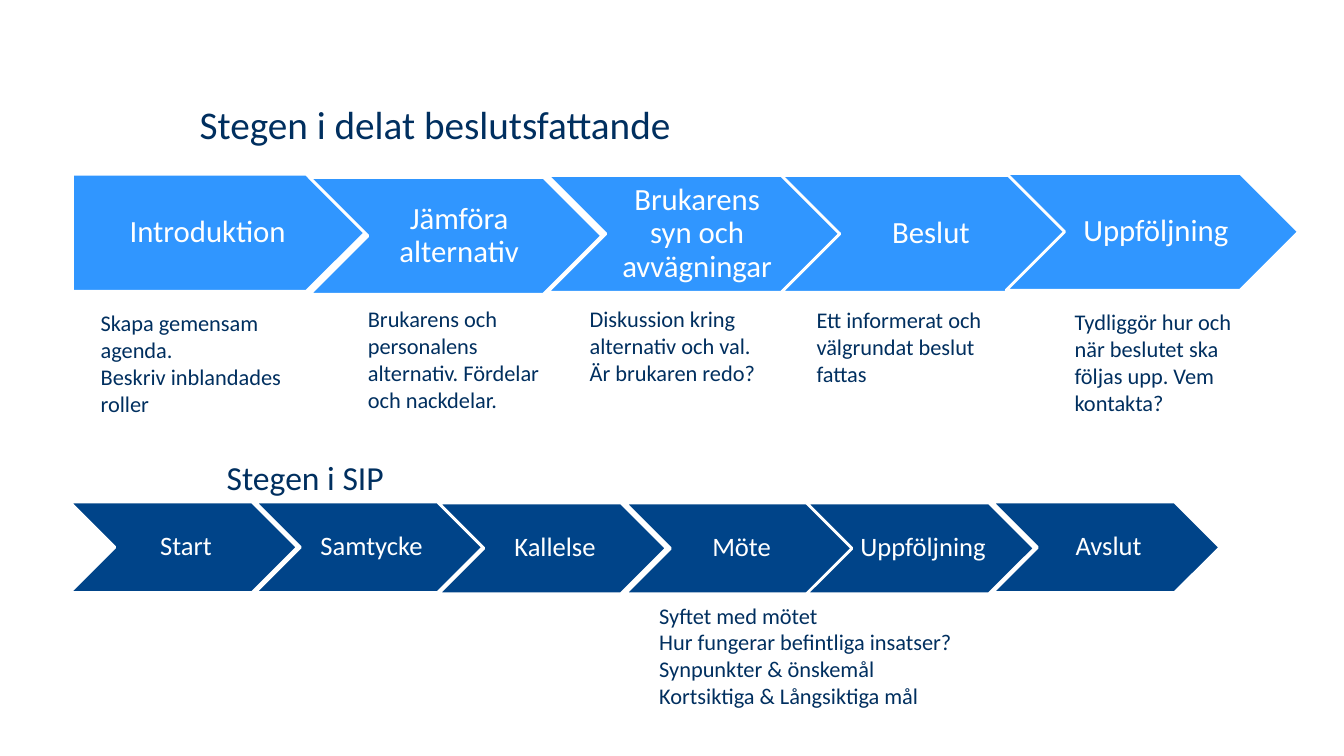
from dataclasses import dataclass

from pptx import Presentation
from pptx.dml.color import RGBColor
from pptx.enum.shapes import MSO_SHAPE
from pptx.enum.text import MSO_ANCHOR, MSO_AUTO_SIZE, PP_ALIGN
from pptx.slide import Slide
from pptx.text.text import TextFrame
from pptx.util import Emu, Pt

PX = 9144  # 100 px to the inch
FONT = "Calibri"
COLORS = {"navy": "002F5F", "sky": "3096FF", "deep": "004489", "white": "FFFFFF"}


@dataclass(frozen=True)
class Process:
    """Look shared by every arrow in one row; insets are left, top, right, bottom."""
    width: int
    height: int
    fill: str
    size: int
    insets: tuple[int, int, int, int]


@dataclass(frozen=True)
class Step:
    label: str
    left: int
    top: int
    outline: MSO_SHAPE = MSO_SHAPE.CHEVRON


@dataclass(frozen=True)
class Note:
    text: str
    left: int
    top: int
    width: int
    height: int
    size: int = 16


SHARED_DECISION = Process(290, 116, "sky", 22, (10, 6, 3, 6))
DECISION_STEPS = [
    Step("Introduktion", 72, 173, MSO_SHAPE.PENTAGON),
    Step("Jämföra alternativ", 307, 176),
    Step("Brukarens syn och avvägningar", 543, 174),
    Step("Beslut", 775, 174),
    Step("Uppföljning", 998, 172),
]

SIP = Process(226, 90, "deep", 19, (7, 3, 2, 3))
SIP_STEPS = [
    Step("Start", 69, 498),
    Step("Samtycke", 253, 498),
    Step("Kallelse", 435, 499),
    Step("Möte", 620, 499),
    Step("Uppföljning", 800, 499),
    Step("Avslut", 984, 498),
]

HEADING = Note("Stegen i delat beslutsfattande", 188, 94, 946, 57, 28)
NOTES = [
    Note("Skapa gemensam agenda.\vBeskriv inblandades roller", 90, 302, 206, 118),
    Note("Brukarens och personalens alternativ. Fördelar och nackdelar.",
         355, 298, 221, 118),
    Note("Diskussion kring alternativ och val.\vÄr brukaren redo?", 575, 298, 226, 91),
    Note("Ett informerat och välgrundat beslut fattas", 800, 299, 205, 91),
    Note("Tydliggör hur och när beslutet ska följas upp. Vem kontakta?",
         1056, 301, 205, 118),
    Note("Stegen i SIP", 215, 448, 500, 50, 24),
    Note("Syftet med mötet\vHur fungerar befintliga insatser?\n"
         "Synpunkter & önskemål\nKortsiktiga & Långsiktiga mål", 644, 592, 397, 118),
]


def px(length: int) -> Emu:
    return Emu(length * PX)


def rgb(name: str) -> RGBColor:
    return RGBColor.from_string(COLORS[name])


def apply(target: object, values: dict[str, object]) -> None:
    for name, value in values.items():
        setattr(target, name, value)


def write(frame: TextFrame, text: str, size: int, color: str,
          frame_format: dict[str, object], paragraph_format: dict[str, object]) -> None:
    frame.text = text
    apply(frame, {"word_wrap": True, **frame_format})
    for paragraph in frame.paragraphs:
        apply(paragraph, paragraph_format)
        for run in paragraph.runs:
            apply(run.font, {"name": FONT, "size": Pt(size)})
            run.font.color.rgb = rgb(color)


def draw_step(slide: Slide, process: Process, step: Step) -> None:
    arrow = slide.shapes.add_shape(step.outline, px(step.left), px(step.top),
                                   px(process.width), px(process.height))
    arrow.shadow.inherit = False
    arrow.fill.solid()
    arrow.fill.fore_color.rgb = rgb(process.fill)
    arrow.line.color.rgb = rgb("white")
    arrow.line.width = Pt(2)
    sides = ("margin_left", "margin_top", "margin_right", "margin_bottom")
    insets = {side: px(inset) for side, inset in zip(sides, process.insets)}
    write(arrow.text_frame, step.label, process.size, "white",
          {"vertical_anchor": MSO_ANCHOR.MIDDLE, **insets},
          {"alignment": PP_ALIGN.CENTER, "line_spacing": 0.9})


def draw_note(slide: Slide, note: Note) -> None:
    caption = slide.shapes.add_textbox(px(note.left), px(note.top),
                                       px(note.width), px(note.height))
    write(caption.text_frame, note.text, note.size, "navy",
          {"auto_size": MSO_AUTO_SIZE.SHAPE_TO_FIT_TEXT},
          {"alignment": PP_ALIGN.LEFT})


def draw_heading(slide: Slide, note: Note) -> None:
    heading = slide.shapes.title
    apply(heading, {"left": px(note.left), "top": px(note.top),
                    "width": px(note.width), "height": px(note.height)})
    write(heading.text_frame, note.text, note.size, "navy",
          {"vertical_anchor": MSO_ANCHOR.TOP, "auto_size": MSO_AUTO_SIZE.NONE},
          {"alignment": PP_ALIGN.LEFT})


def main() -> None:
    deck = Presentation()
    apply(deck, {"slide_width": px(1333), "slide_height": px(750)})
    slide = deck.slides.add_slide(deck.slide_layouts.get_by_name("Title Only"))

    # Heading
    draw_heading(slide, HEADING)

    # Both rows of arrows
    for process, steps in ((SHARED_DECISION, DECISION_STEPS), (SIP, SIP_STEPS)):
        for step in steps:
            draw_step(slide, process, step)

    # Explanations and the second heading
    for note in NOTES:
        draw_note(slide, note)

    deck.save("out.pptx")


if __name__ == "__main__":
    main()
